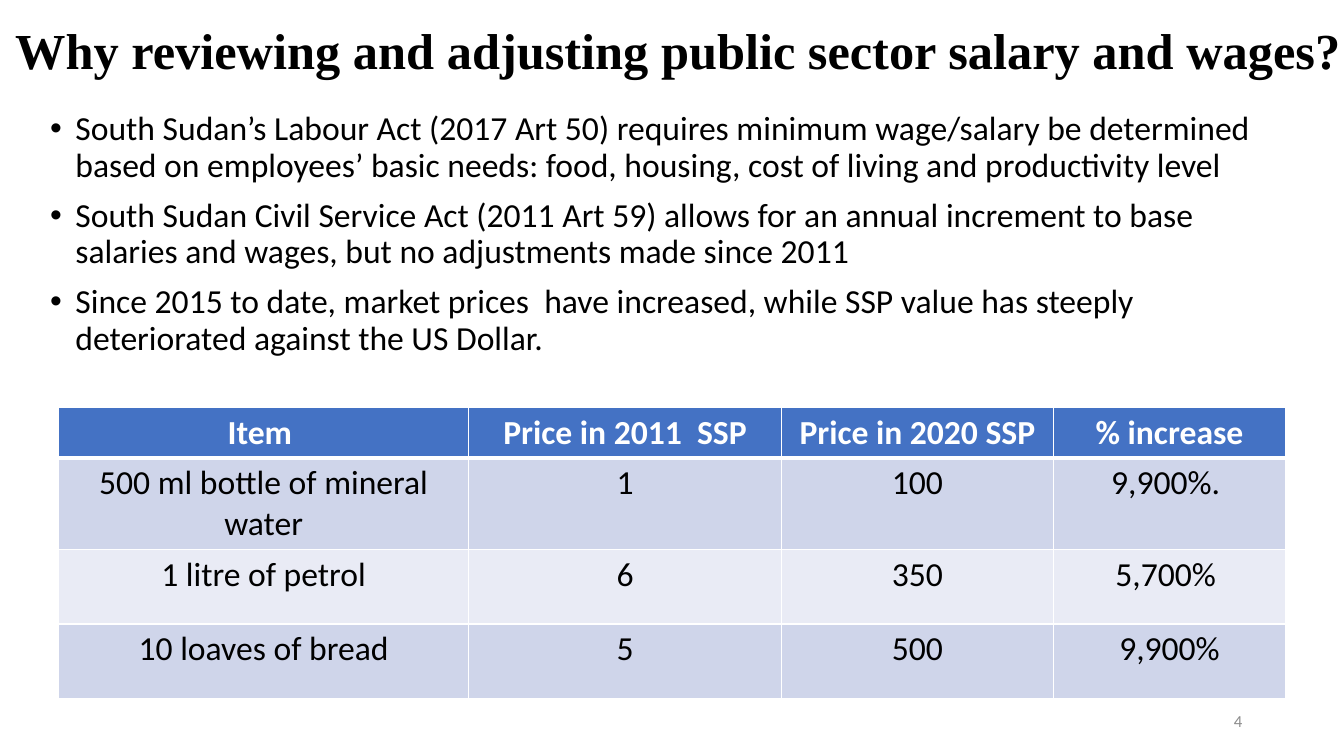
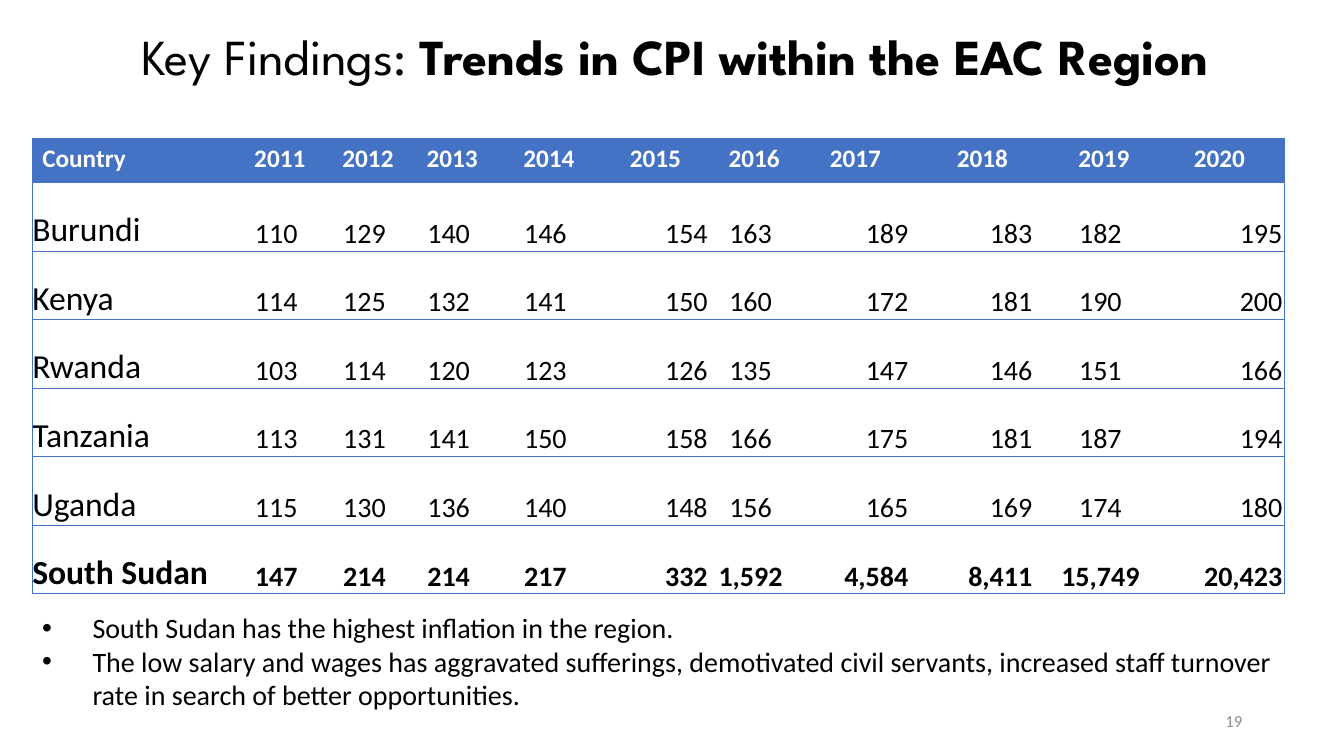
from lxml import etree
from pptx import Presentation
from pptx.dml.color import RGBColor
from pptx.enum.text import MSO_ANCHOR, PP_ALIGN
from pptx.oxml.ns import qn
from pptx.util import Inches, Pt

LEFT, CENTER, RIGHT = PP_ALIGN.LEFT, PP_ALIGN.CENTER, PP_ALIGN.RIGHT
TOP, MIDDLE, BOTTOM = MSO_ANCHOR.TOP, MSO_ANCHOR.MIDDLE, MSO_ANCHOR.BOTTOM

WHITE = RGBColor(0xFF, 0xFF, 0xFF)
BLACK = RGBColor(0x00, 0x00, 0x00)
BLUE = RGBColor(0x44, 0x72, 0xC4)
BAND_DARK = RGBColor(0xCF, 0xD5, 0xEA)
BAND_LIGHT = RGBColor(0xE9, 0xEB, 0xF5)
GRAY = RGBColor(0x8C, 0x8C, 0x8C)
BODY_FONT = "Calibri"

# Formats shared by both slides
TITLE = dict(size=36, align=CENTER, line_spacing=0.9)
PAGE_NUMBER = dict(size=12, color=GRAY, align=RIGHT)
PAGE_NUMBER_BOX = (9.42, 6.95, 3, 0.4)

# Slide 1 content
SALARY_TITLE = [("Why reviewing and adjusting public sector salary and wages?", True)]
SALARY_POINTS = [
    "South Sudan’s Labour Act (2017 Art 50) requires minimum wage/salary be determined based on "
    "employees’ basic needs: food, housing, cost of living and productivity level",
    "South Sudan Civil Service Act (2011 Art 59) allows for an annual increment to base salaries "
    "and wages, but no adjustments made since 2011",
    "Since 2015 to date, market prices  have increased, while SSP value has steeply deteriorated "
    "against the US Dollar.",
]
PRICES = [
    ("Item ", "Price in 2011  SSP", "Price in 2020 SSP", "% increase"),
    ("500 ml bottle of mineral water", "1", "100", "9,900%. "),
    ("1 litre of petrol", "6", "350", "5,700% "),
    ("10 loaves of bread", "5", "500", "9,900%"),
]
PRICE_COLUMNS = [4.07, 3.1, 2.7, 2.3]
PRICE_ROWS = [0.5, 0.91, 0.74, 0.74]

# Slide 2 content
CPI_TITLE = [("Key Findings: ", False), ("Trends in CPI within the EAC Region", True)]
CPI = [
    ("Country", *range(2011, 2021)),
    ("Burundi", 110, 129, 140, 146, 154, 163, 189, 183, 182, 195),
    ("Kenya", 114, 125, 132, 141, 150, 160, 172, 181, 190, 200),
    ("Rwanda", 103, 114, 120, 123, 126, 135, 147, 146, 151, 166),
    ("Tanzania", 113, 131, 141, 150, 158, 166, 175, 181, 187, 194),
    ("Uganda", 115, 130, 136, 140, 148, 156, 165, 169, 174, 180),
    ("South Sudan", 147, 214, 214, 217, 332, 1592, 4584, 8411, 15749, 20423),
]
CPI_COLUMNS = [1.98, 0.95, 0.8, 0.87, 1.05, 1.06, 0.9, 1.11, 1.41, 1, 1.29]
CPI_ROWS = [0.44] + [0.68] * 6
# Right inset of the right-aligned columns; the others are centred
CPI_RIGHT_INSETS = {5: 0.01, 7: 0.03, 8: 0.21, 10: 0.02}
CPI_CENTER_INSET = 0.07
CPI_POINTS = [
    "South Sudan has the highest inflation in the region.",
    "The low salary and wages has aggravated sufferings, demotivated civil servants, increased "
    "staff turnover rate in search of better opportunities.",
]


def write_paragraph(paragraph, runs, size, font=BODY_FONT, color=BLACK, align=LEFT, **spacing):
    """Write (text, bold) runs; spacing holds further paragraph attributes."""
    for name, value in dict(spacing, alignment=align).items():
        setattr(paragraph, name, value)
    for text, bold in runs:
        run = paragraph.add_run()
        run.text = text
        for name, value in dict(name=font, size=Pt(size), bold=bold).items():
            setattr(run.font, name, value)
        run.font.color.rgb = color


def add_bullet(paragraph, indent):
    properties = paragraph._p.get_or_add_pPr()
    properties.set("marL", str(Inches(indent)))
    properties.set("indent", str(-Inches(indent)))
    etree.SubElement(properties, qn("a:buFont"), typeface="Arial")
    etree.SubElement(properties, qn("a:buChar"), char="•")


def add_text(slide, box, paragraphs, anchor=TOP, bullet_indent=None, **style):
    frame = slide.shapes.add_textbox(*map(Inches, box)).text_frame
    frame.word_wrap = True
    frame.vertical_anchor = anchor
    for index, runs in enumerate(paragraphs):
        paragraph = frame.add_paragraph() if index else frame.paragraphs[0]
        write_paragraph(paragraph, runs, **style)
        if bullet_indent:
            add_bullet(paragraph, bullet_indent)


def add_points(slide, box, points, **style):
    add_text(slide, box, [[(point, False)] for point in points], **style)


def add_slide(presentation, title, title_box, title_font, page):
    slide = presentation.slides.add_slide(presentation.slide_layouts[6])
    add_text(slide, title_box, [title], anchor=MIDDLE, font=title_font, **TITLE)
    add_text(slide, PAGE_NUMBER_BOX, [[(str(page), False)]], anchor=MIDDLE, **PAGE_NUMBER)
    return slide


def set_borders(cell, borders):
    """borders maps L, R, T, B to (colour, points); a missing side has no line."""
    properties = cell._tc.get_or_add_tcPr()
    for side in "LRTB":
        line = etree.SubElement(properties, qn("a:ln" + side))
        if side in borders:
            color, width = borders[side]
            line.set("w", str(Pt(width)))
            fill = etree.SubElement(line, qn("a:solidFill"))
            etree.SubElement(fill, qn("a:srgbClr"), val=str(color))
        else:
            etree.SubElement(line, qn("a:noFill"))


def add_table(slide, left, top, columns, rows, data, cell_format):
    """cell_format(row, column) gives borders, fill, cell attributes and text style."""
    table = slide.shapes.add_table(
        len(rows), len(columns), *map(Inches, (left, top, sum(columns), sum(rows)))
    ).table
    table.horz_banding = False
    for column, width in zip(table.columns, columns):
        column.width = Inches(width)
    for row, height in zip(table.rows, rows):
        row.height = Inches(height)
    for r, values in enumerate(data):
        for c, value in enumerate(values):
            cell = table.cell(r, c)
            borders, fill, attributes, bold, style = cell_format(r, c)
            set_borders(cell, borders)
            if fill is None:
                cell.fill.background()
            else:
                cell.fill.solid()
                cell.fill.fore_color.rgb = fill
            for name, setting in attributes.items():
                setattr(cell, name, setting)
            text = f"{value:,}" if r and isinstance(value, int) else str(value)
            write_paragraph(cell.text_frame.paragraphs[0], [(text, bold)], **style)


def price_format(row, column):
    borders = {side: (WHITE, 1) for side in "LRTB"}
    if row < 2:
        borders["T" if row else "B"] = (WHITE, 3)
    fill = (BAND_DARK if row % 2 else BAND_LIGHT) if row else BLUE
    style = dict(size=24, color=BLACK if row else WHITE, align=CENTER)
    return borders, fill, {}, row == 0, style


def cpi_format(row, column):
    sides = "TB" + "L" * (column == 0) + "R" * (column == len(CPI_COLUMNS) - 1)
    borders = {side: (BLUE, 0.5) for side in sides}
    if row == 0:
        style = dict(size=18, color=WHITE, align=CENTER if column else LEFT)
        return borders, BLUE, {}, True, style
    inset = CPI_RIGHT_INSETS.get(column, CPI_CENTER_INSET if column else 0)
    attributes = dict(
        vertical_anchor=BOTTOM, margin_left=0, margin_top=0, margin_bottom=0,
        margin_right=Inches(inset),
    )
    if column == 0:
        style = dict(size=24)
    else:
        style = dict(size=20, align=RIGHT if column in CPI_RIGHT_INSETS else CENTER)
    return borders, None, attributes, row == len(CPI) - 1, style


def main():
    presentation = Presentation()
    presentation.slide_width, presentation.slide_height = Inches(13.33), Inches(7.5)

    # Reasons and price increases
    slide = add_slide(presentation, SALARY_TITLE, (0, 0, 13.45, 1.06), "Times New Roman", 4)
    add_points(slide, (0.4, 1.06, 12.17, 2.9), SALARY_POINTS, bullet_indent=0.25,
               size=24, line_spacing=0.9, space_before=Pt(10))
    add_table(slide, 0.58, 4.04, PRICE_COLUMNS, PRICE_ROWS, PRICES, price_format)

    # Consumer prices by country
    slide = add_slide(presentation, CPI_TITLE, (0.32, 0.2, 12.75, 0.78), "League Spartan", 19)
    add_table(slide, 0.32, 1.37, CPI_COLUMNS, CPI_ROWS, CPI, cpi_format)
    add_points(slide, (0.32, 6.01, 12.67, 1.11), CPI_POINTS, bullet_indent=0.5, size=20)

    presentation.save("out.pptx")


if __name__ == "__main__":
    main()
